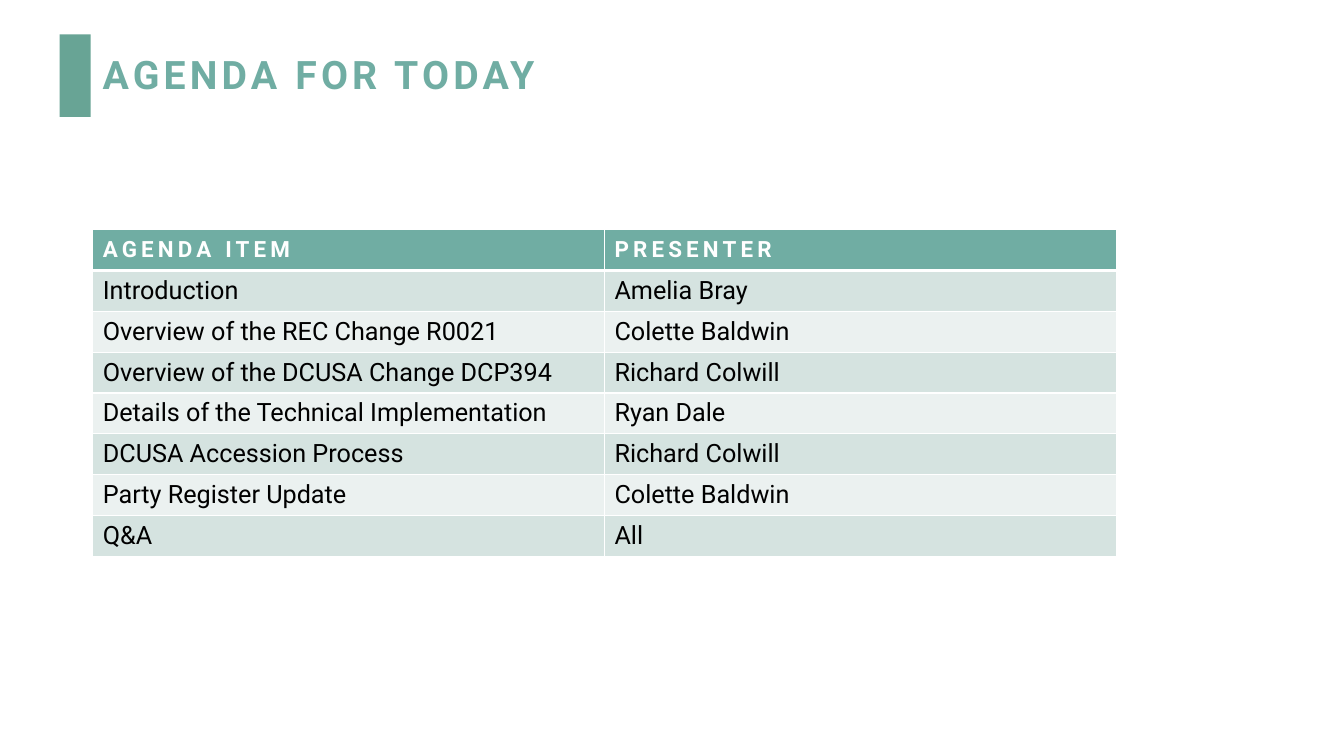
from dataclasses import dataclass

from lxml import etree
from pptx import Presentation
from pptx import util as u
from pptx.dml import color
from pptx.enum import shapes, text
from pptx.oxml import ns


@dataclass(frozen=True)
class Theme:
    font: str = "Roboto"
    bar: str = "68A495"
    main: str = "70ADA3"
    bands: tuple = ("D5E3E0", "EBF1F0")
    white: str = "FFFFFF"
    ink: str = "000000"
    title: int = 28
    head: int = 16
    body: int = 18
    gap: int = 3  # letter spacing of headings, in points


AGENDA = [
    ("AGENDA ITEM", "PRESENTER"),
    ("Introduction", "Amelia Bray"),
    ("Overview of the REC Change R0021", "Colette Baldwin"),
    ("Overview of the DCUSA Change DCP394", "Richard Colwill"),
    ("Details of the Technical Implementation", "Ryan Dale"),
    ("DCUSA Accession Process", "Richard Colwill"),
    ("Party Register Update", "Colette Baldwin"),
    ("Q&A", "All"),
]


def paint(fill, tone):
    fill.solid()
    fill.fore_color.rgb = color.RGBColor.from_string(tone)


def write(frame, words, *, font, size, tone, bold=False, gap=0, line=None):
    para = frame.paragraphs[0]
    para.line_spacing = line
    run = para.add_run()
    run.text = words
    run.font.name = font
    run.font.size = u.Pt(size)
    run.font.bold = bold
    run.font.color.rgb = color.RGBColor.from_string(tone)
    if gap:
        run._r.get_or_add_rPr().set("spc", str(gap * 100))


def edge(cell, side, width, tone):
    props = cell._tc.get_or_add_tcPr()
    line = etree.SubElement(props, ns.qn("a:ln" + side), w=str(u.Pt(width)))
    solid = etree.SubElement(line, ns.qn("a:solidFill"))
    etree.SubElement(solid, ns.qn("a:srgbClr"), val=tone)


class Deck:
    def __init__(self, theme):
        self.theme = theme
        self.prs = Presentation()
        self.prs.slide_width = u.Inches(13.33)
        self.prs.slide_height = u.Inches(7.5)
        self.slide = self.prs.slides.add_slide(self.prs.slide_layouts[6])

    def bar(self, *box):
        shape = self.slide.shapes.add_shape(
            shapes.MSO_SHAPE.RECTANGLE, *map(u.Inches, box))
        shape.shadow.inherit = False
        paint(shape.fill, self.theme.bar)
        shape.line.fill.background()

    def title(self, words, *box):
        look = self.theme
        frame = self.slide.shapes.add_textbox(*map(u.Inches, box)).text_frame
        frame.word_wrap = True
        frame.vertical_anchor = text.MSO_ANCHOR.MIDDLE
        write(frame, words, font=look.font, size=look.title, tone=look.main,
              bold=True, gap=look.gap, line=0.9)

    def table(self, rows, *box):
        look = self.theme
        grid = self.slide.shapes.add_table(
            len(rows), len(rows[0]), *map(u.Inches, box)).table
        for r, row in enumerate(rows):
            for c, words in enumerate(row):
                self.cell(grid.cell(r, c), words, r)

    def cell(self, cell, words, row):
        look = self.theme
        head = row == 0
        cell.vertical_anchor = text.MSO_ANCHOR.MIDDLE
        # A thick rule parts the header from the body
        widths = {"L": 1, "R": 1, "T": 3 if row == 1 else 1, "B": 3 if head else 1}
        for side, width in widths.items():
            edge(cell, side, width, look.white)
        paint(cell.fill, look.main if head else look.bands[(row - 1) % 2])
        write(cell.text_frame, words, font=look.font, bold=head,
              size=look.head if head else look.body,
              tone=look.white if head else look.ink,
              gap=look.gap if head else 0)


def main():
    deck = Deck(Theme())
    # Heading
    deck.bar(0.59, 0.34, 0.31, 0.82)
    deck.title("AGENDA FOR TODAY", 0.92, 0.4, 10.15, 0.72)
    # Agenda
    deck.table(AGENDA, 0.92, 2.28, 10.15, 3.24)
    deck.prs.save("out.pptx")


if __name__ == "__main__":
    main()
